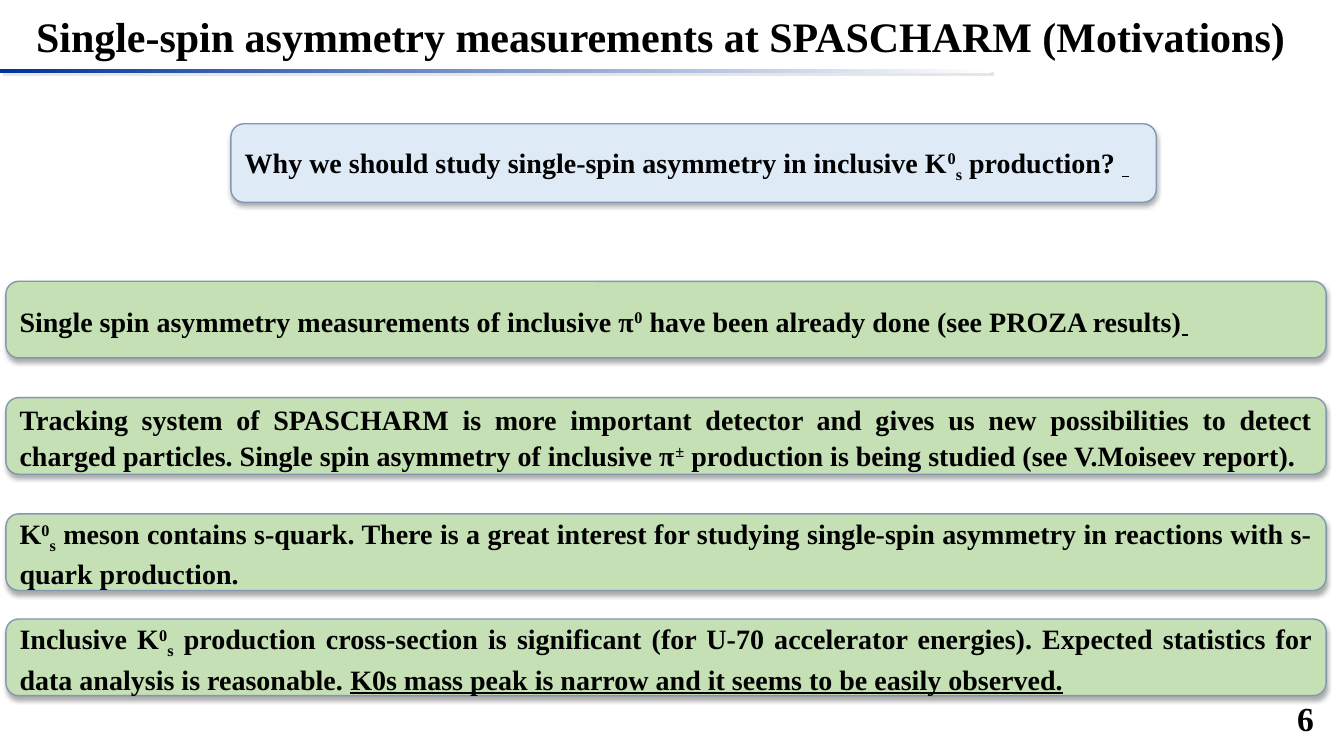
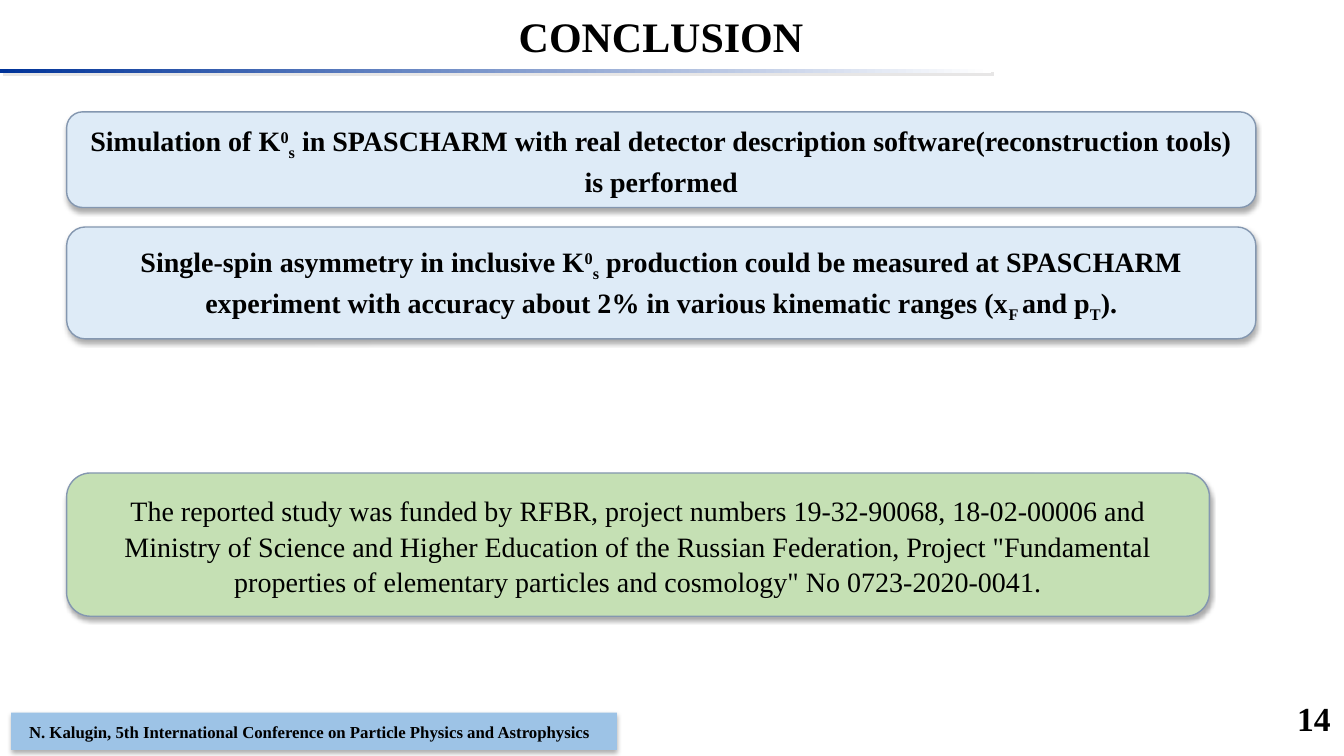
from dataclasses import dataclass

from lxml.etree import SubElement
from pptx import Presentation
from pptx.dml.color import RGBColor
from pptx.enum.shapes import MSO_SHAPE as Preset
from pptx.enum.text import MSO_ANCHOR as Anchor, MSO_AUTO_SIZE as AutoSize, PP_ALIGN as Align
from pptx.oxml.ns import qn
from pptx.shapes.autoshape import Shape
from pptx.slide import Slide
from pptx.util import Cm, Pt

FONT = "Times New Roman"
COLORS = {
    "ink": "000000",
    "paper": "FFFFFF",
    "rule": "003399",
    "rule_shadow": "E7E6E6",
    "blue": "DEEBF7",
    "green": "C5E0B4",
    "outline": "8497B0",
    "footer": "9DC3E6",
}
MARKS = {"^": 30, "_": -25, "~": 0}


@dataclass(frozen=True)
class Panel:
    text: str
    left: float
    top: float
    width: float
    height: float
    fill: str = "green"
    align: Align = Align.CENTER
    bold: bool = True
    size: float = 20
    preset: Preset = Preset.ROUNDED_RECTANGLE
    outline: bool = True


@dataclass(frozen=True)
class Page:
    title: str
    number: str
    number_width: float
    panels: tuple[Panel, ...]


def reason(text: str, top: float) -> Panel:
    return Panel(text, 0.15, top, 33.27, 1.93, align=Align.JUSTIFY)


PAGES = (
    Page("Single-spin asymmetry measurements at SPASCHARM (Motivations)", "6", 0.94, (
        Panel("Why we should study single-spin asymmetry in inclusive K[^0][_s] production? [~ ]",
              5.82, 3.12, 23.32, 1.98, "blue", Align.JUSTIFY),
        reason("Single spin asymmetry measurements of inclusive π[^0] have been already done "
               "(see PROZA results)[~ ]", 7.09),
        reason("Tracking system of SPASCHARM is more important detector and gives us new "
               "possibilities to detect charged particles. Single spin asymmetry of inclusive "
               "π[^±] production is being studied (see V.Moiseev report).", 10.02),
        reason("K[^0][_s] meson contains s-quark. There is a great interest for studying "
               "single-spin asymmetry in reactions with s-quark production. ", 12.95),
        reason("Inclusive K[^0][_s] production cross-section is significant (for U-70 accelerator "
               "energies). Expected statistics for data analysis is reasonable. "
               "[~K0s mass peak is narrow and it seems to be easily observed.]", 15.6),
    )),
    Page("CONCLUSION", "14", 1.37, (
        Panel("Simulation of K[^0][_s] in SPASCHARM with real detector description "
              "software(reconstruction tools) is performed", 1.68, 2.82, 29.97, 2.41, "blue"),
        Panel("Single-spin asymmetry in inclusive K[^0][_s] production could be measured at "
              "SPASCHARM experiment with accuracy about 2% in various kinematic ranges "
              "(x[_F ]and p[_T]).", 1.68, 5.72, 29.97, 2.82, "blue"),
        Panel("The reported study was funded by RFBR, project numbers 19-32-90068, 18-02-00006 "
              "and Ministry of Science and Higher Education of the Russian Federation, Project "
              '"Fundamental properties of elementary particles and cosmology" No 0723-2020-0041.',
              1.68, 11.92, 28.8, 3.61, bold=False),
        Panel("N. Kalugin, 5th International Conference on Particle Physics and Astrophysics  ",
              0.28, 17.96, 15.27, 0.94, "footer", size=12, preset=Preset.RECTANGLE, outline=False),
    )),
)


def color(name: str) -> RGBColor:
    return RGBColor.from_string(COLORS[name])


def write(shape: Shape, text: str, *, size: float, bold: bool = True,
          align: Align = Align.CENTER, spacing: float = 1.07,
          anchor: Anchor = Anchor.TOP, wrap: bool = True, grow: bool = False) -> None:
    frame = shape.text_frame
    frame.word_wrap = wrap
    frame.vertical_anchor = anchor
    if grow:
        frame.auto_size = AutoSize.SHAPE_TO_FIT_TEXT
    paragraph = frame.paragraphs[0]
    paragraph.alignment = align
    paragraph.line_spacing = spacing

    def add_run(words: str, mark: str = "") -> None:
        if not words:
            return
        run = paragraph.add_run()
        run.text = words
        font = run.font
        font.name, font.size, font.bold = FONT, Pt(size), bold
        font.color.rgb = color("ink")
        if mark == "~":
            font.underline = True
        elif mark:
            font._element.set("baseline", str(MARKS[mark] * 1000))

    plain, *marked = text.split("[")
    add_run(plain)
    for chunk in marked:
        inside, after = chunk.split("]")
        add_run(inside[1:], inside[0])
        add_run(after)


def cast_shadow(shape: Shape, *, name: str = "ink", opacity: int = 32,
                blur: float = 3.5, distance: float = 2.2, angle: int = 90) -> None:
    shape.shadow.inherit = False
    effects = shape._element.spPr.find(qn("a:effectLst"))
    shadow = SubElement(effects, qn("a:outerShdw"), blurRad=str(Pt(blur)), dist=str(Pt(distance)),
                        dir=str(angle * 60000), algn="t", rotWithShape="0")
    tone = SubElement(shadow, qn("a:srgbClr"), val=COLORS[name])
    SubElement(tone, qn("a:alpha"), val=str(opacity * 1000))


def draw_panel(slide: Slide, panel: Panel) -> None:
    shape = slide.shapes.add_shape(panel.preset, Cm(panel.left), Cm(panel.top),
                                   Cm(panel.width), Cm(panel.height))
    shape.fill.solid()
    shape.fill.fore_color.rgb = color(panel.fill)
    if panel.outline:
        shape.line.color.rgb = color("outline")
        shape.line.width = Pt(1)
    else:
        shape.line.fill.background()
    cast_shadow(shape)
    write(shape, panel.text, size=panel.size, bold=panel.bold,
          align=panel.align, anchor=Anchor.MIDDLE)


def draw_rule(slide: Slide) -> None:
    rule = slide.shapes.add_shape(Preset.RECTANGLE, 0, Cm(1.75), Cm(24.97), Cm(0.1))
    rule.fill.gradient()
    rule.fill.gradient_angle = 0
    for stop, position, name in zip(rule.fill.gradient_stops, (0, 1), ("rule", "paper")):
        stop.position = position
        stop.color.rgb = color(name)
    rule.line.fill.background()
    cast_shadow(rule, name="rule_shadow", opacity=100, blur=0, distance=2.8, angle=45)


def draw_page(slide: Slide, page: Page) -> None:
    title = slide.shapes.add_textbox(Cm(0.15), Cm(0.05), Cm(33.02), Cm(1.52))
    write(title, page.title, size=30, grow=True)
    draw_rule(slide)
    for panel in page.panels:
        draw_panel(slide, panel)
    number = slide.shapes.add_textbox(Cm(32.44), Cm(17.45), Cm(page.number_width), Cm(1.27))
    write(number, page.number, size=24, align=Align.LEFT, spacing=1.0, wrap=False, grow=True)


def main() -> None:
    deck = Presentation()
    deck.slide_width, deck.slide_height = Cm(33.87), Cm(19.05)
    for page in PAGES:
        draw_page(deck.slides.add_slide(deck.slide_layouts[6]), page)
    deck.save("out.pptx")


if __name__ == "__main__":
    main()
